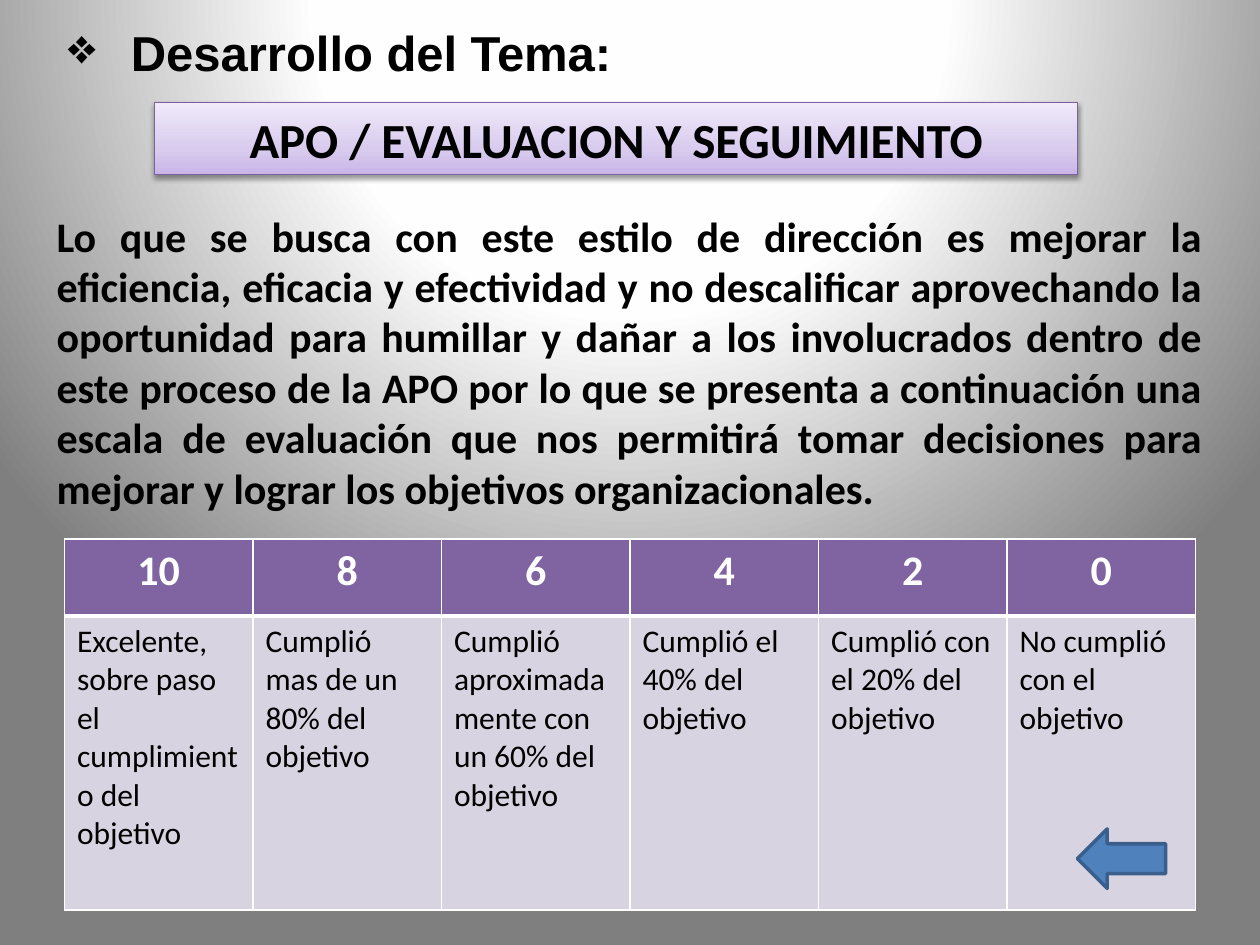
from lxml.etree import SubElement
from pptx import Presentation
from pptx.dml.color import RGBColor
from pptx.enum.shapes import MSO_SHAPE
from pptx.enum.text import MSO_ANCHOR, PP_ALIGN
from pptx.oxml.ns import qn
from pptx.util import Cm, Pt

BODY = (
    "Lo que se busca con este estilo de dirección es mejorar la eficiencia, "
    "eficacia y efectividad y no descalificar aprovechando la oportunidad para "
    "humillar y dañar a los involucrados dentro de este proceso de la APO por lo "
    "que se presenta a continuación una escala de evaluación que nos permitirá "
    "tomar decisiones para mejorar y lograr los objetivos organizacionales."
)
SCALE = [
    ("10", "Excelente, sobre paso el cumplimiento del objetivo"),
    ("8", "Cumplió mas de un 80% del objetivo"),
    ("6", "Cumplió aproximadamente con un 60% del objetivo"),
    ("4", "Cumplió el 40% del objetivo"),
    ("2", "Cumplió con el 20% del objetivo"),
    ("0", "No cumplió con el objetivo"),
]


def color(value):
    """Turn a hex string into a colour."""
    return RGBColor.from_string(value)


def add_node(parent, tag, **attributes):
    """Append an XML child with the given attributes."""
    return SubElement(parent, qn(tag), {key: str(value) for key, value in attributes.items()})


def set_gradient(fill, parent, stops):
    """Give the parent a gradient of (percent, colour) stops and return its node."""
    fill.solid()
    solid = parent.find(qn("a:solidFill"))
    gradient = add_node(parent, "a:gradFill", rotWithShape=1)
    parent.replace(solid, gradient)
    stop_list = add_node(gradient, "a:gsLst")
    for percent, value in stops:
        stop = add_node(stop_list, "a:gs", pos=percent * 1000)
        add_node(stop, "a:srgbClr", val=value)
    return gradient


def set_background(page):
    """Paint the circular grey gradient behind the slide."""
    fill = page.background.fill
    fill.solid()
    properties = page.element.xpath(".//p:bgPr")[0]
    stops = [(0, "FFFFFF"), (40, "FEFEFE"), (100, "7F7F7F")]
    gradient = set_gradient(fill, properties, stops)
    circle = add_node(gradient, "a:path", path="circle")
    add_node(circle, "a:fillToRect", l=50000, t=-80000, r=50000, b=180000)


def write(text_frame, text, size, font="Calibri", value="000000", bold=True, align=None):
    """Set one formatted paragraph and return it."""
    text_frame.word_wrap = True
    text_frame.text = text
    paragraph = text_frame.paragraphs[0]
    paragraph.alignment = align
    span = paragraph.runs[0].font
    span.size, span.name, span.bold = Pt(size), font, bold
    span.color.rgb = color(value)
    return paragraph


def add_text(page, left, top, width, height, text, size, **style):
    """Add a text box and return its paragraph."""
    box = page.shapes.add_textbox(Cm(left), Cm(top), Cm(width), Cm(height))
    return write(box.text_frame, text, size, **style)


def set_bullet(paragraph, character, indent):
    """Give the paragraph a hanging bullet."""
    properties = paragraph._p.get_or_add_pPr()
    properties.set("marL", str(indent))
    properties.set("indent", str(-indent))
    add_node(properties, "a:buChar", char=character)


def add_shape(page, kind, left, top, width, height, line, line_width):
    """Add an outlined preset shape without a shadow."""
    shape = page.shapes.add_shape(kind, Cm(left), Cm(top), Cm(width), Cm(height))
    shape.shadow.inherit = False
    shape.line.color.rgb = color(line)
    shape.line.width = Pt(line_width)
    return shape


def add_banner(page, text):
    """Add the lilac heading bar with its soft shadow."""
    banner = add_shape(page, MSO_SHAPE.RECTANGLE, 3.12, 2.07, 18.6, 1.45, "7D60A0", 0.75)
    properties = banner.element.spPr
    stops = [(0, "C9B5E8"), (35, "D8CBEE"), (100, "F0EAF9")]
    gradient = set_gradient(banner.fill, properties, stops)
    add_node(gradient, "a:lin", ang=270 * 60000, scaled=0)
    shadow = add_node(
        properties.find(qn("a:effectLst")), "a:outerShdw",
        blurRad=Pt(3.1), dist=Pt(1.6), dir=90 * 60000, rotWithShape=0,
    )
    add_node(add_node(shadow, "a:srgbClr", val="000000"), "a:alpha", val=38000)
    banner.text_frame.vertical_anchor = MSO_ANCHOR.MIDDLE
    write(banner.text_frame, text, 28, align=PP_ALIGN.CENTER)


def style_cell(cell, fill, top, bottom):
    """Fill a cell and give it white borders."""
    properties = cell._tc.get_or_add_tcPr()
    for side, width in (("L", 1), ("R", 1), ("T", top), ("B", bottom)):
        border = add_node(properties, f"a:ln{side}", w=Pt(width))
        add_node(add_node(border, "a:solidFill"), "a:srgbClr", val="FFFFFF")
    cell.fill.solid()
    cell.fill.fore_color.rgb = color(fill)


def add_scale(page):
    """Add the evaluation scale table."""
    frame = page.shapes.add_table(2, len(SCALE), Cm(1.3), Cm(10.87), Cm(22.8), Cm(7.47))
    table = frame.table
    table.rows[0].height, table.rows[1].height = Cm(1.55), Cm(5.92)
    for index, (score, meaning) in enumerate(SCALE):
        table.columns[index].width = Cm(3.8)
        head, body = table.cell(0, index), table.cell(1, index)
        write(head.text_frame, score, 24, value="FFFFFF", align=PP_ALIGN.CENTER)
        style_cell(head, "8064A2", 1, 3)
        write(body.text_frame, meaning, 18, bold=False)
        style_cell(body, "D8D3E0", 3, 1)


def main():
    """Build the slide and save it."""
    deck = Presentation()
    deck.slide_width, deck.slide_height = Cm(25.4), Cm(19.05)
    page = deck.slides.add_slide(deck.slide_layouts[6])
    set_background(page)
    title = add_text(page, 1.12, 0.33, 23.4, 3.68, "Desarrollo del Tema:", 28, font="Arial")
    set_bullet(title, "❖", Cm(1.27))
    add_banner(page, "APO / EVALUACION Y SEGUIMIENTO")
    add_text(page, 0.89, 4.11, 23.6, 6.4, BODY, 24, align=PP_ALIGN.JUSTIFY)
    add_scale(page)
    arrow = add_shape(page, MSO_SHAPE.LEFT_ARROW, 21.72, 16.71, 1.78, 1.2, "3A5F8C", 2)
    arrow.fill.solid()
    arrow.fill.fore_color.rgb = color("4F81BD")
    deck.save("out.pptx")


if __name__ == "__main__":
    main()
